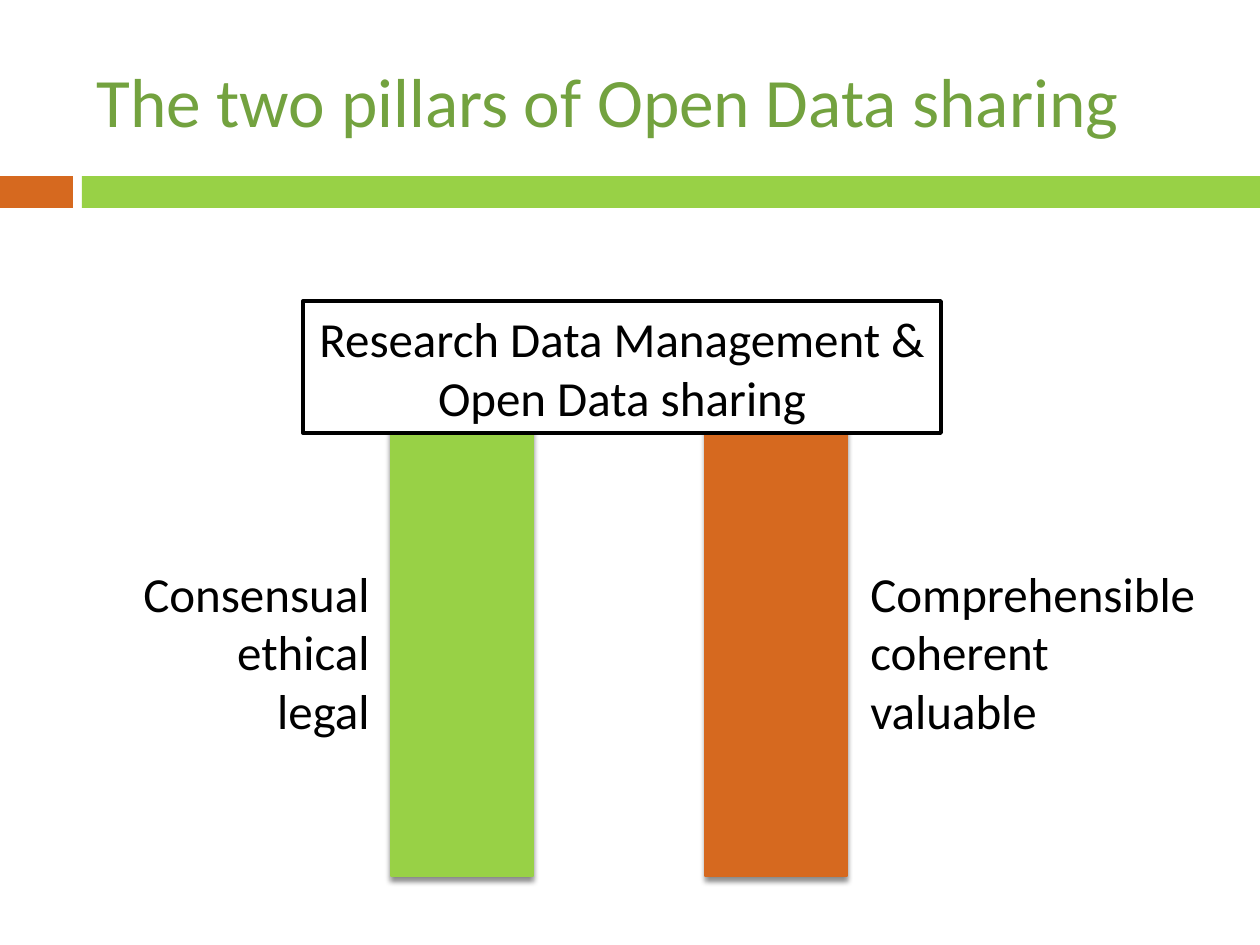
import pptx
import pptx.dml.color
import pptx.enum.shapes
import pptx.enum.text
import pptx.oxml
import pptx.oxml.ns
import pptx.util

PX = 914400 // 126
GREEN = pptx.dml.color.RGBColor(0x98, 0xD1, 0x46)
ORANGE = pptx.dml.color.RGBColor(0xD6, 0x69, 0x1F)
TITLE_GREEN = pptx.dml.color.RGBColor(0x73, 0xA2, 0x3F)
BLACK = pptx.dml.color.RGBColor(0, 0, 0)
WHITE = pptx.dml.color.RGBColor(255, 255, 255)
ALIGN = pptx.enum.text.PP_ALIGN
SHADOW = (
    f'<a:effectLst {pptx.oxml.ns.nsdecls("a")}>'
    '<a:outerShdw blurRad="38100" dist="30480" dir="5400000" rotWithShape="0">'
    '<a:srgbClr val="000000"><a:alpha val="45000"/></a:srgbClr>'
    '</a:outerShdw></a:effectLst>'
)

presentation = pptx.Presentation()
presentation.slide_width = pptx.util.Inches(10)
presentation.slide_height = pptx.util.Inches(7.5)
slide = presentation.slides.add_slide(presentation.slide_layouts[5])


def add_rectangle(left, top, width, height, fill):
    shape = slide.shapes.add_shape(
        pptx.enum.shapes.MSO_SHAPE.RECTANGLE,
        left * PX, top * PX, width * PX, height * PX)
    shape.shadow.inherit = False
    shape.fill.solid()
    shape.fill.fore_color.rgb = fill
    shape.line.fill.background()
    return shape


def write_text(shape, text, size, color, alignment):
    text_frame = shape.text_frame
    text_frame.word_wrap = True
    text_frame.text = text
    for paragraph in text_frame.paragraphs:
        paragraph.alignment = alignment
        for run in paragraph.runs:
            run.font.name = "Calibri"
            run.font.size = pptx.util.Pt(size)
            run.font.color.rgb = color


# Title
title = slide.shapes.title
title.left, title.top, title.width, title.height = 84 * PX, 32 * PX, 1124 * PX, 136 * PX
write_text(title, "The two pillars of Open Data sharing", 39.6, TITLE_GREEN, ALIGN.LEFT)
title.text_frame.vertical_anchor = pptx.enum.text.MSO_ANCHOR.MIDDLE

# Two-coloured band under the title
add_rectangle(0, 176, 73, 32, ORANGE)
add_rectangle(82, 176, 1178, 32, GREEN)

# Pillars
for left, color in ((391, GREEN), (705, ORANGE)):
    pillar = add_rectangle(left, 421, 142, 455, color)
    pillar.line.color.rgb = color
    pillar.line.width = pptx.util.Pt(0.79)
    properties = pillar.fill._xPr
    properties.remove(properties.find(pptx.oxml.ns.qn("a:effectLst")))
    properties.append(pptx.oxml.parse_xml(SHADOW))

# Pillar labels
for left, width, text, alignment in (
    (0, 382, "Consensual\nethical\nlegal", ALIGN.RIGHT),
    (858, 369, "Comprehensible\ncoherent\nvaluable", ALIGN.LEFT),
):
    label = slide.shapes.add_textbox(left * PX, 557 * PX, width * PX, 190 * PX)
    write_text(label, text, 28, BLACK, alignment)

# Lintel resting on the pillars
lintel = add_rectangle(303, 301, 638, 132, WHITE)
lintel.line.color.rgb = BLACK
lintel.line.width = pptx.util.Pt(2.25)
write_text(lintel, "Research Data Management & Open Data sharing", 28, BLACK, ALIGN.CENTER)

presentation.save("out.pptx")
